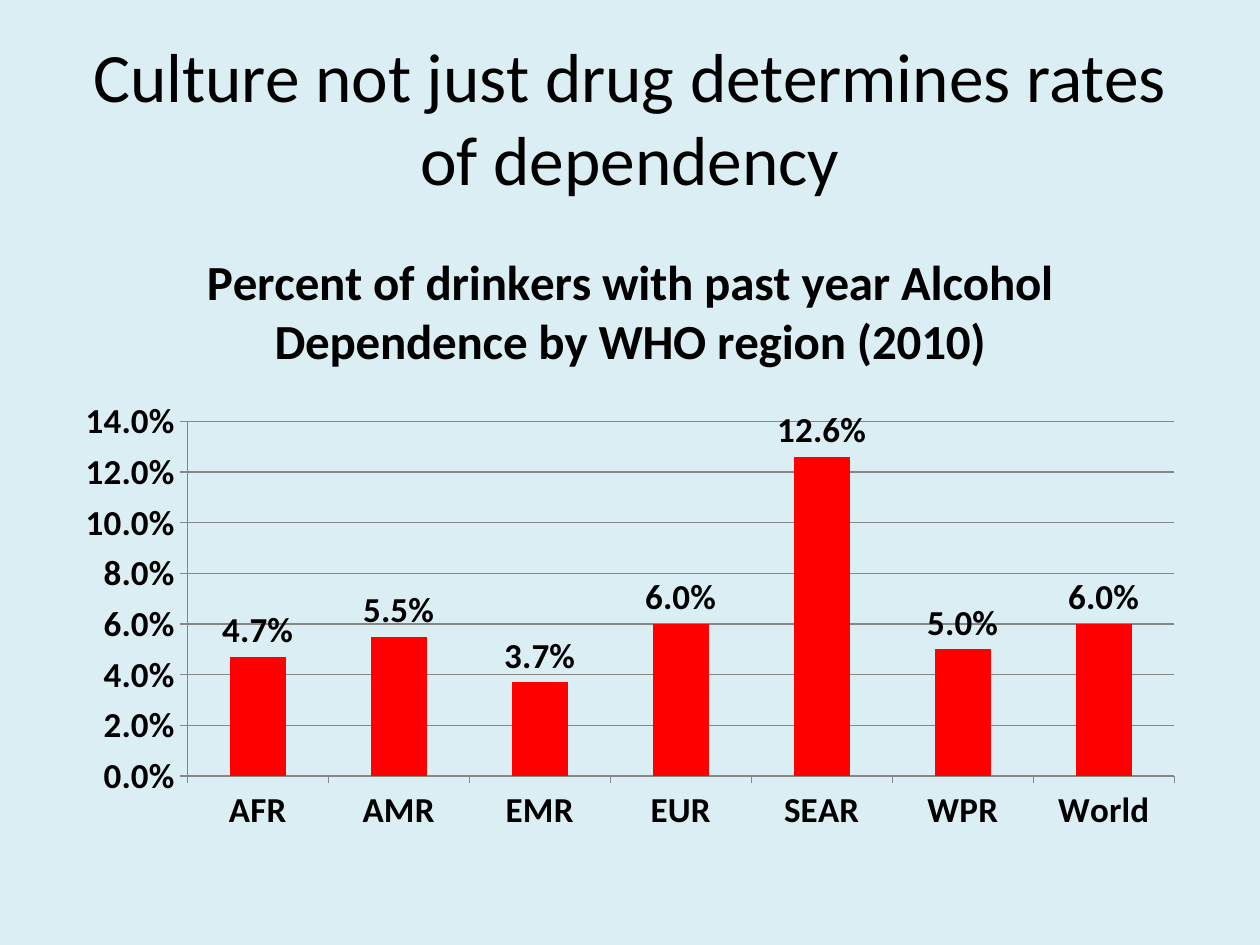
from dataclasses import dataclass

from pptx import Presentation
from pptx.chart.data import CategoryChartData
from pptx.dml.color import RGBColor
from pptx.enum.chart import XL_CHART_TYPE, XL_LABEL_POSITION, XL_TICK_MARK
from pptx.enum.text import MSO_ANCHOR, PP_ALIGN
from pptx.util import Inches, Pt

COLUMN = XL_CHART_TYPE.COLUMN_CLUSTERED
ABOVE = XL_LABEL_POSITION.OUTSIDE_END
OUTSIDE = XL_TICK_MARK.OUTSIDE
MIDDLE = MSO_ANCHOR.MIDDLE
CENTER = PP_ALIGN.CENTER


@dataclass(frozen=True)
class Theme:
    font: str = "Calibri"
    back: RGBColor = RGBColor(0xDB, 0xEE, 0xF4)
    ink: RGBColor = RGBColor(0, 0, 0)
    bar: RGBColor = RGBColor(0xFF, 0, 0)
    grid: RGBColor = RGBColor(0x86, 0x86, 0x86)
    head: float = 39.6
    title: float = 28
    label: float = 20


THEME = Theme()
PERCENT = "0.0%"
RATES = {"AFR": 0.047, "AMR": 0.055, "EMR": 0.037, "EUR": 0.06,
         "SEAR": 0.126, "WPR": 0.05, "World": 0.06}


def set_font(font, size, bold=False):
    font.name = THEME.font
    font.size = Pt(size)
    font.bold = bold
    font.color.rgb = THEME.ink


def add_text(frame, text, size, bold=False, align=CENTER):
    para = frame.paragraphs[0]
    para.alignment = align
    run = para.add_run()
    run.text = text
    set_font(run.font, size, bold)


def add_heading(slide, box):
    frame = slide.shapes.add_textbox(*box).text_frame
    frame.word_wrap = True
    frame.vertical_anchor = MIDDLE
    add_text(frame, "Culture not just drug determines rates of dependency",
             size=THEME.head)


def style_line(line):
    line.color.rgb = THEME.grid
    line.width = Pt(0.75)


def add_rates(slide, box):
    data = CategoryChartData(number_format=PERCENT)
    data.categories = list(RATES)
    data.add_series("Series 1", list(RATES.values()))
    chart = slide.shapes.add_chart(COLUMN, *box, data).chart
    set_font(chart.font, THEME.label, bold=True)
    chart.has_legend = False

    # Chart title
    chart.has_title = True
    add_text(chart.chart_title.text_frame,
             "Percent of drinkers with past year Alcohol "
             "Dependence by WHO region (2010)",
             size=THEME.title, bold=True)
    chart.chart_title.include_in_layout = False

    # Axes and gridlines
    for axis in (chart.category_axis, chart.value_axis):
        axis.major_tick_mark = OUTSIDE
        style_line(axis.format.line)
    scale = chart.value_axis
    scale.minimum_scale = 0
    scale.maximum_scale = 0.14
    scale.major_unit = 0.02
    scale.tick_labels.number_format = PERCENT
    scale.tick_labels.number_format_is_linked = False
    scale.has_major_gridlines = True
    style_line(scale.major_gridlines.format.line)

    # Bars and their values
    plot = chart.plots[0]
    plot.gap_width = 150
    plot.vary_by_categories = False
    fill = plot.series[0].format.fill
    fill.solid()
    fill.fore_color.rgb = THEME.bar
    plot.has_data_labels = True
    labels = plot.data_labels
    labels.show_value = True
    labels.position = ABOVE
    labels.number_format = PERCENT
    labels.number_format_is_linked = False
    set_font(labels.font, THEME.label, bold=True)


def main():
    deck = Presentation()
    deck.slide_width = Inches(10)
    deck.slide_height = Inches(7.5)
    slide = deck.slides.add_slide(deck.slide_layouts[6])
    fill = slide.background.fill
    fill.solid()
    fill.fore_color.rgb = THEME.back

    left, width = Inches(0.5), Inches(9)
    add_heading(slide, (left, Inches(0.3), width, Inches(1.25)))
    add_rates(slide, (left, Inches(1.75), width, Inches(4.95)))
    deck.save("out.pptx")


if __name__ == "__main__":
    main()
